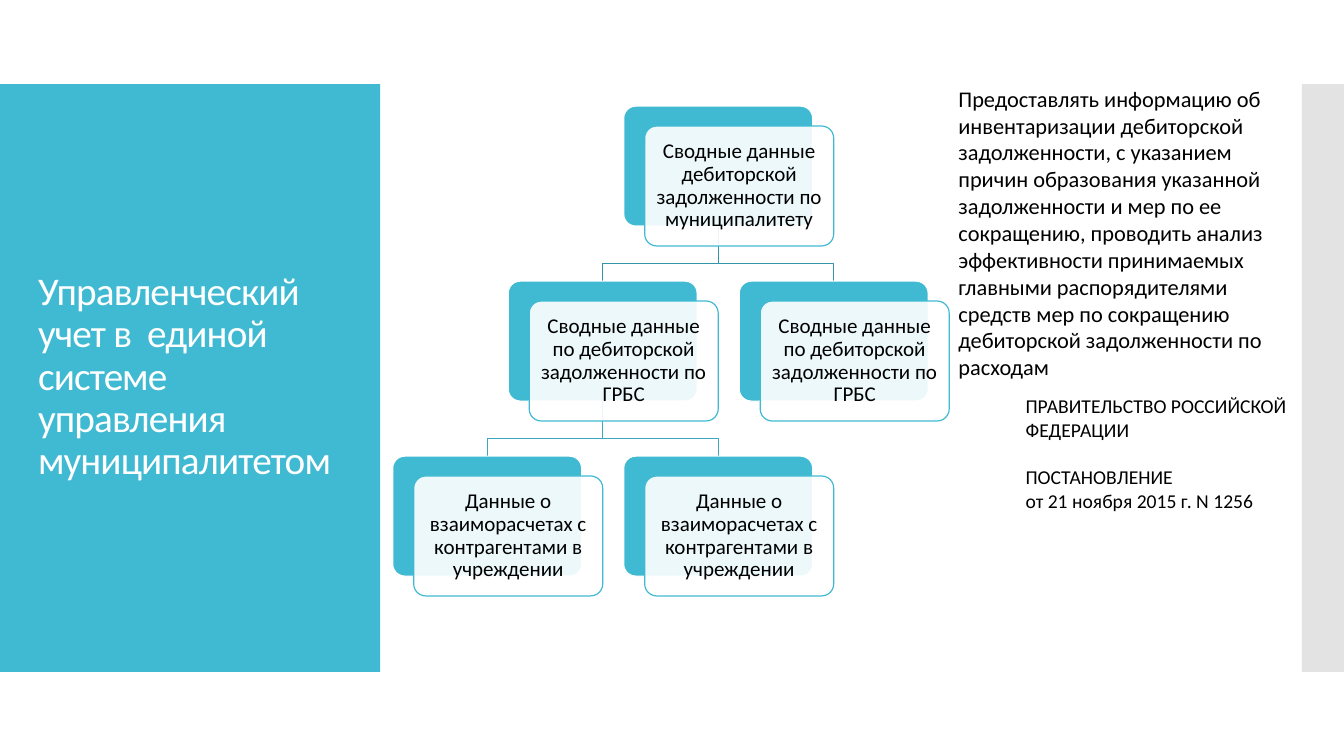
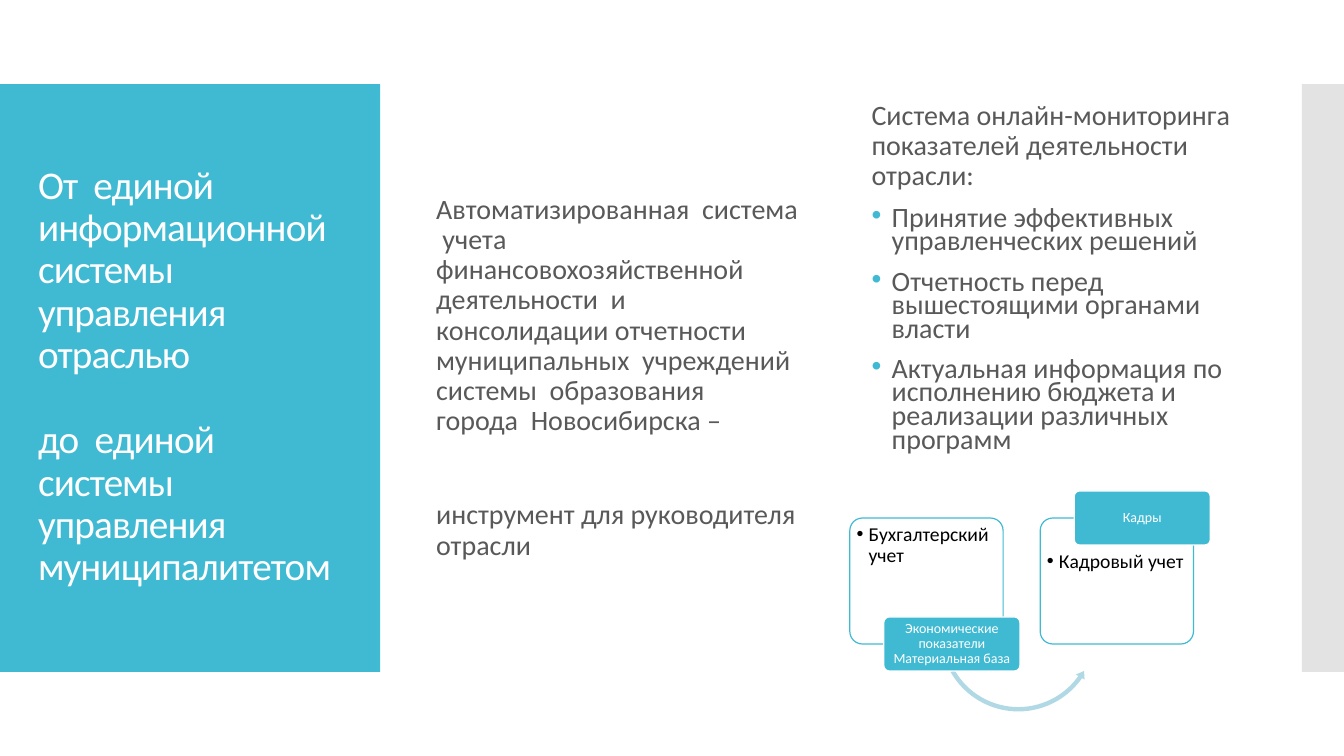
from lxml import etree
from pptx import Presentation
from pptx import util as u
from pptx.dml import color
from pptx.enum import shapes, text
from pptx.oxml import ns

Pt = u.Pt
HUE = {"teal": "40BAD2", "white": "FFFFFF", "black": "000000", "body": "595959",
       "band": "C8C8C8", "arc": "B0D9E5", "link1": "3395A8", "link2": "3AA9BF"}
LEFT, MID = text.PP_ALIGN.LEFT, text.PP_ALIGN.CENTER
TOP, HALF = text.MSO_ANCHOR.TOP, text.MSO_ANCHOR.MIDDLE


def look(size, hue, align=LEFT, anchor=TOP, line=0.9, above=0, pad=(7.2, 3.6)):
    """Describe a text style as dicts of format values."""
    side, edge = map(Pt, pad)
    return {"hue": hue,
            "frame": {"word_wrap": True, "auto_size": text.MSO_AUTO_SIZE.NONE,
                      "vertical_anchor": anchor, "margin_left": side,
                      "margin_right": side, "margin_top": edge, "margin_bottom": edge},
            "para": {"alignment": align, "line_spacing": line,
                     "space_before": Pt(above), "space_after": Pt(0)},
            "font": {"name": "Calibri", "size": Pt(size)}}


LOOK = {"title": look(28, "white", anchor=HALF),
        "main": look(20, "body", anchor=HALF, above=12),
        "list": look(20, "body", above=12),
        "card": look(15, "black", MID, HALF, pad=(4.3, 4.3)),
        "note": look(16, "black", line=1.0),
        "law": look(14, "black", line=1.0),
        "item": look(14, "black", pad=(2.2, 2.2)),
        "tag": look(10, "white", MID, HALF, pad=(1.2, 0.7))}


def rgb(name):
    """Return the colour of a name."""
    return color.RGBColor.from_string(HUE[name])


def put(obj, vals):
    """Set attributes from a dict."""
    for key, val in vals.items():
        setattr(obj, key, val)


def write(shape, kind, *paras):
    """Fill a shape with paragraphs, each a string or a string with extra values."""
    style, frame = LOOK[kind], shape.text_frame
    put(frame, style["frame"])
    for i, para in enumerate(paras):
        words, more = (para, {}) if isinstance(para, str) else para
        par = frame.paragraphs[0] if i == 0 else frame.add_paragraph()
        par.text = words
        put(par, {**style["para"], **more})
        for run in par.runs:
            put(run.font, style["font"])
            run.font.color.rgb = rgb(style["hue"])
    return shape


def dot(shape, hue, gap, skip=0):
    """Give bullets to the paragraphs after the skipped ones."""
    for prop in list(shape.element.iter(ns.qn("a:pPr")))[skip:]:
        prop.set("marL", str(Pt(gap)))
        prop.set("indent", str(-Pt(gap)))
        tint = etree.SubElement(prop, ns.qn("a:buClr"))
        etree.SubElement(tint, ns.qn("a:srgbClr")).set("val", HUE[hue])
        etree.SubElement(prop, ns.qn("a:buFont")).set("typeface", "Arial")
        etree.SubElement(prop, ns.qn("a:buChar")).set("char", "•")


def block(page, box, fill, line=None, form="ROUNDED_RECTANGLE", alpha=None):
    """Add a preset shape with flat fill and thin line."""
    shape = page.shapes.add_shape(shapes.MSO_SHAPE[form], *map(Pt, box))
    shape.shadow.inherit = False
    shape.fill.solid()
    shape.fill.fore_color.rgb = rgb(fill)
    if form == "ROUNDED_RECTANGLE":
        shape.adjustments[0] = 0.1
    if alpha:
        tint = next(shape.element.spPr.iter(ns.qn("a:srgbClr")))
        etree.SubElement(tint, ns.qn("a:alpha")).set("val", str(alpha * 1000))
    if line:
        shape.line.color.rgb = rgb(line)
        shape.line.width = Pt(0.85)
    else:
        shape.line.fill.background()
    return shape


def label(page, box, kind, *paras):
    """Add a text box."""
    return write(page.shapes.add_textbox(*map(Pt, box)), kind, *paras)


def bands(deck, page):
    """Draw the side bands and move them into the shared layout."""
    base = page.slide_layout.shapes.element
    for i, (box, hue, alpha) in enumerate([((0, 60, 271.5, 420), "teal", None),
                                           ((930, 60, 30, 420), "band", 50)]):
        band = block(page, box, hue, form="RECTANGLE", alpha=alpha).element
        band.nvSpPr.cNvPr.id = 20 + i
        base.insert(2 + i, band)


def start(deck, *paras):
    """Add a title-only slide and format its title."""
    page = deck.slides.add_slide(deck.slide_layouts[5])
    head = page.shapes.title
    put(head, dict(zip(("left", "top", "width", "height"),
                       map(Pt, (20, 88.5, 232, 362)))))
    write(head, "title", *paras)
    for prop in head.element.iter(ns.qn("a:rPr")):
        prop.set("spc", "-60")
    return page


def link(page, x, y, end, drop, hue):
    """Draw an elbow line from a parent down to a child."""
    turn = y + 27
    points = [(x, turn), (end, turn), (end, y + drop)]
    form = page.shapes.build_freeform(Pt(x), Pt(y))
    form.add_line_segments([(Pt(a), Pt(b)) for a, b in points], close=False)
    line = form.convert_to_shape()
    line.shadow.inherit = False
    line.fill.background()
    line.line.color.rgb = rgb(hue)
    line.line.width = Pt(0.85)


def tree(page, left, top, nodes):
    """Draw a tree of double cards from (column, row, parent, words)."""
    wide, high, step, rise = 135, 85.7, 82.5, 125
    spots = [(left + col * step, top + row * rise) for col, row, _, _ in nodes]
    for (x, _), (_, row, up, _) in zip(spots, nodes):
        if up is not None:
            px, py = spots[up]
            link(page, px + wide / 2, py + high, x + wide / 2, rise - high, f"link{row}")
    for (x, y), node in zip(spots, nodes):
        block(page, (x, y, wide, high), "teal", "white")
        front = block(page, (x + 15, y + 14.2, wide, high), "white", "teal", alpha=90)
        write(front, "card", node[3])


def step(page, x, y, item, tag, low):
    """Draw one process step with its tag at the lower or upper edge."""
    wide, high, tall = 109.5, 90, 38.6
    card = write(block(page, (x, y, wide, high), "white", "teal", alpha=90), "item", item)
    dot(card, "black", 8.6)
    if low:
        arc = block(page, (x + 62.8, y + 25, 115.2, 115.2), "arc",
                    form="LEFT_CIRCULAR_ARROW")
        for i, val in enumerate((0.027, 3.258, 21.014, 90.245, 0.031)):
            arc.adjustments[i] = val
    else:
        card.text_frame.margin_top = Pt(21.5)
    edge = y + (high if low else 0) - tall / 2
    write(block(page, (x + 24.3, edge, 97.2, tall), "teal", "white"), "tag", tag)


def report(deck):
    """Build the slide with the tree of debt data."""
    page = start(deck, "Управленческий учет в  единой  системе  управления \nмуниципалитетом")
    bands(deck, page)
    group = "Сводные данные по дебиторской задолженности по ГРБС"
    unit = "Данные о взаиморасчетах с контрагентами в учреждении"
    tree(page, 280.5, 75.8, [
        (2, 0, None, "Сводные данные дебиторской задолженности по муниципалитету"),
        (1, 1, 0, group), (3, 1, 0, group), (0, 2, 1, unit), (2, 2, 1, unit)])
    label(page, (677.5, 57, 245, 220), "note",
          "Предоставлять информацию об инвентаризации дебиторской задолженности, "
          "с указанием причин образования указанной задолженности и мер по ее "
          "сокращению, проводить анализ эффективности принимаемых главными "
          "распорядителями средств мер по сокращению дебиторской задолженности по расходам")
    label(page, (725.5, 278, 202, 92), "law",
          "ПРАВИТЕЛЬСТВО РОССИЙСКОЙ ФЕДЕРАЦИИ",
          ("ПОСТАНОВЛЕНИЕ", {"space_before": Pt(17)}),
          "от 21 ноября 2015 г. N 1256")


def system(deck):
    """Build the slide with the monitoring system."""
    page = start(deck, "От  единой  информационной  системы  управления  отраслью",
                 ("до  единой  системы  управления \nмуниципалитетом",
                  {"space_before": Pt(30.8)}))
    label(page, (304.5, 68.5, 273.5, 403), "main",
          "Автоматизированная  система  учета  финансовохозяйственной  деятельности  и  "
          "консолидации отчетности  муниципальных  учреждений  системы  образования  "
          "города  Новосибирска –",
          ("инструмент для руководителя отрасли", {"space_before": Pt(45.6)}))
    goals = ("Принятие эффективных управленческих решений",
             "Отчетность перед вышестоящими органами власти",
             "Актуальная информация по исполнению бюджета и реализации различных программ")
    aims = label(page, (615.5, 68.5, 273.5, 403), "list",
                 "Система онлайн-мониторинга показателей деятельности отрасли:",
                 *((goal, {"line_spacing": 0.7}) for goal in goals))
    dot(aims, "teal", 14.4, skip=1)
    parts = [("Бухгалтерский учет", "Экономические показатели\nМатериальная база", True),
             ("Кадровый учет", "Кадры", False)]
    for i, part in enumerate(parts):
        step(page, 607 + 136 * i, 370, *part)


def main():
    """Build and save the deck."""
    deck = Presentation()
    put(deck, {"slide_width": Pt(960), "slide_height": Pt(540)})
    report(deck)
    system(deck)
    deck.save("out.pptx")


if __name__ == "__main__":
    main()
